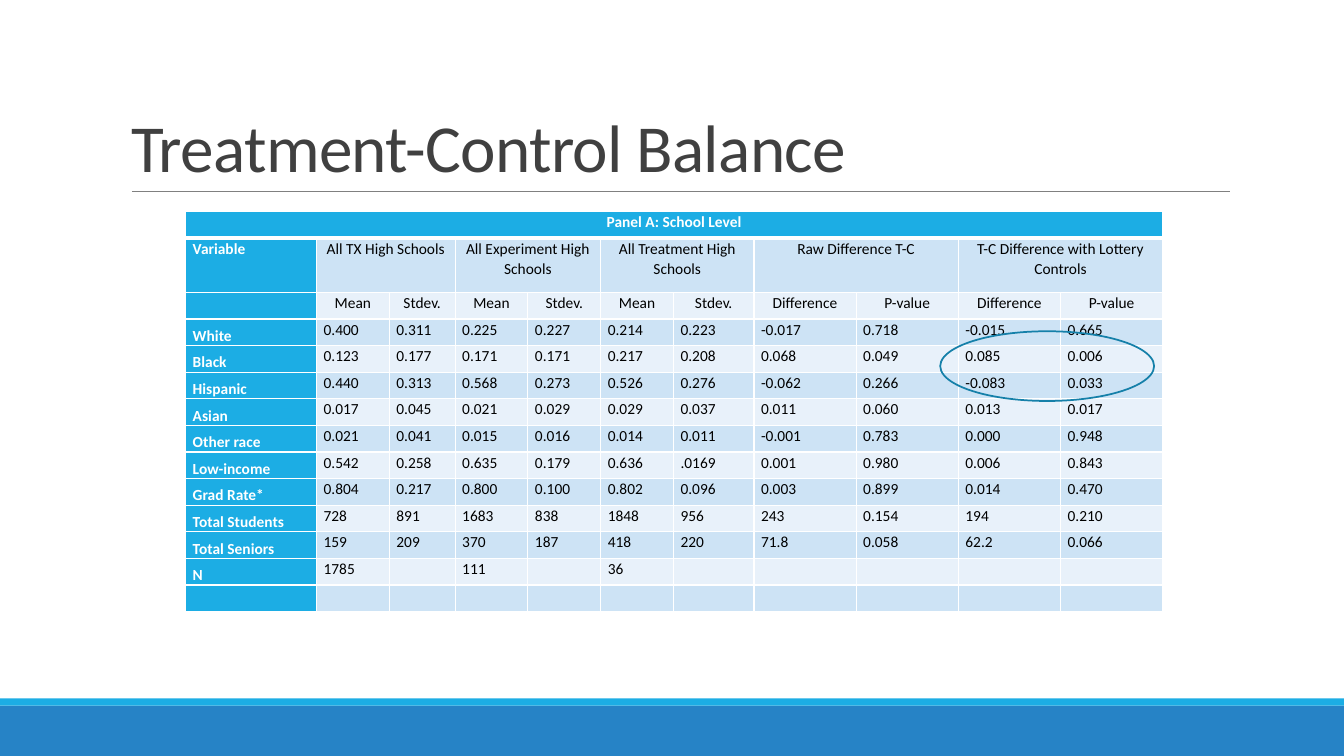
"""Build the treatment-control balance slide."""
from lxml import etree
from pptx import Presentation
from pptx.dml.color import RGBColor
from pptx.enum import shapes, text
from pptx.oxml import ns
from pptx.util import Pt

FONT = "Calibri"
WHITE, BLACK, CYAN, BLUE = "FFFFFF", "000000", "1CADE4", "2683C6"
BANDS = ("E8F1FA", "CDE3F5")
COLUMN_WIDTHS = [93.5, 52, 47, 52, 52, 52, 57.5, 73, 73, 73, 73]
ROW_HEIGHT, GROUP_ROW_HEIGHT = 19, 38.7
PANEL = "Panel A: School Level"
GROUPS = ["All TX High Schools", "All Experiment High Schools", "All Treatment High Schools",
          "Raw Difference T-C", "T-C Difference with Lottery Controls"]
MEASURES = ["Mean", "Stdev."] * 3 + ["Difference", "P-value"] * 2
BALANCE = [
    ("White", "0.400 0.311 0.225 0.227 0.214 0.223 -0.017 0.718 -0.015 0.665"),
    ("Black", "0.123 0.177 0.171 0.171 0.217 0.208 0.068 0.049 0.085 0.006"),
    ("Hispanic", "0.440 0.313 0.568 0.273 0.526 0.276 -0.062 0.266 -0.083 0.033"),
    ("Asian", "0.017 0.045 0.021 0.029 0.029 0.037 0.011 0.060 0.013 0.017"),
    ("Other race", "0.021 0.041 0.015 0.016 0.014 0.011 -0.001 0.783 0.000 0.948"),
    ("Low-income", "0.542 0.258 0.635 0.179 0.636 .0169 0.001 0.980 0.006 0.843"),
    ("Grad Rate*", "0.804 0.217 0.800 0.100 0.802 0.096 0.003 0.899 0.014 0.470"),
    ("Total Students", "728 891 1683 838 1848 956 243 0.154 194 0.210"),
    ("Total Seniors", "159 209 370 187 418 220 71.8 0.058 62.2 0.066"),
]
SAMPLE_SIZES = ["N", "1785", "", "111", "", "36", "", "", "", "", ""]


def color(hex_value):
    return RGBColor.from_string(hex_value)


def style_font(font, size, hex_value, bold=False):
    font.name, font.size, font.bold = FONT, Pt(size), bold
    font.color.rgb = color(hex_value)


def add_plain_shape(slide, kind, box, fill=None, line=None):
    shape = slide.shapes.add_shape(kind, *map(Pt, box))
    shape.shadow.inherit = False
    if fill:
        shape.fill.solid()
        shape.fill.fore_color.rgb = color(fill)
    else:
        shape.fill.background()
    if line:
        shape.line.color.rgb = color(line)
        shape.line.width = Pt(1.25)
    else:
        shape.line.fill.background()


def add_rule(slide, left, right, top):
    rule = slide.shapes.add_connector(
        shapes.MSO_CONNECTOR.STRAIGHT, Pt(left), Pt(top), Pt(right), Pt(top))
    rule.line.color.rgb = color("808080")
    rule.line.width = Pt(0.5)
    etree.SubElement(rule._element.spPr, ns.qn("a:effectLst"))


def set_title(slide, wording):
    title = slide.shapes.title
    title.left, title.top, title.width, title.height = map(Pt, (86.4, 22.3, 792, 114.5))
    frame = title.text_frame
    frame.text = wording
    frame.vertical_anchor = text.MSO_ANCHOR.BOTTOM
    paragraph = frame.paragraphs[0]
    paragraph.alignment = text.PP_ALIGN.LEFT
    paragraph.line_spacing = 0.85
    style_font(paragraph.font, 48, "404040")
    paragraph.font._element.set("spc", "-50")


def set_borders(cell, bottom):
    properties = cell._tc.get_or_add_tcPr()
    for index, (side, width) in enumerate(zip("LRTB", (1, 1, 1, bottom))):
        border = etree.Element(ns.qn(f"a:ln{side}"), w=str(Pt(width)))
        fill = etree.SubElement(border, ns.qn("a:solidFill"))
        etree.SubElement(fill, ns.qn("a:srgbClr"), val=WHITE)
        properties.insert(index, border)


def style_cell(cell, row, column):
    header = row == 0 or column == 0
    cell.margin_left = cell.margin_right = Pt(5.1)
    cell.margin_top = cell.margin_bottom = 0
    if column == 0 and row > 2:
        cell.vertical_anchor = text.MSO_ANCHOR.BOTTOM
    cell.fill.solid()
    cell.fill.fore_color.rgb = color(CYAN if header else BANDS[row % 2])
    set_borders(cell, 3 if row == 0 else 1)
    paragraph = cell.text_frame.paragraphs[0]
    paragraph.line_spacing = 1.07
    if row == 0 or (row < 3 and column):
        paragraph.alignment = text.PP_ALIGN.CENTER
    style_font(paragraph.font, 11, WHITE if header else BLACK, header)


def balance_rows():
    blanks = [""] * 10
    group_row = ["Variable"]
    for group in GROUPS:
        group_row += [group, ""]
    return [[PANEL, *blanks], group_row, ["", *MEASURES],
            *([variable, *values.split()] for variable, values in BALANCE),
            SAMPLE_SIZES, ["", *blanks]]


def add_balance_table(slide):
    rows = balance_rows()
    heights = [GROUP_ROW_HEIGHT if index == 1 else ROW_HEIGHT for index in range(len(rows))]
    table = slide.shapes.add_table(
        len(rows), len(COLUMN_WIDTHS), Pt(132.6), Pt(151.2),
        Pt(sum(COLUMN_WIDTHS)), Pt(sum(heights))).table
    for column, width in zip(table.columns, COLUMN_WIDTHS):
        column.width = Pt(width)
    for row, height in zip(table.rows, heights):
        row.height = Pt(height)
    for row, values in enumerate(rows):
        for column, value in enumerate(values):
            cell = table.cell(row, column)
            cell.text = value
            style_cell(cell, row, column)
    table.cell(0, 0).merge(table.cell(0, len(COLUMN_WIDTHS) - 1))
    for column in range(1, len(COLUMN_WIDTHS), 2):
        table.cell(1, column).merge(table.cell(1, column + 1))


def main():
    deck = Presentation()
    deck.slide_width, deck.slide_height = Pt(960), Pt(540)
    slide = deck.slides.add_slide(deck.slide_layouts[5])
    add_plain_shape(slide, shapes.MSO_SHAPE.RECTANGLE, (0, 504, 960, 36), fill=BLUE)
    add_plain_shape(slide, shapes.MSO_SHAPE.RECTANGLE, (0, 498.8, 960, 5.2), fill=CYAN)
    add_rule(slide, 94.2, 878.8, 136.8)
    set_title(slide, "Treatment-Control Balance")
    add_balance_table(slide)
    add_plain_shape(slide, shapes.MSO_SHAPE.OVAL, (671.6, 236.6, 152.8, 49.8), line="1580A9")
    deck.save("out.pptx")


if __name__ == "__main__":
    main()
